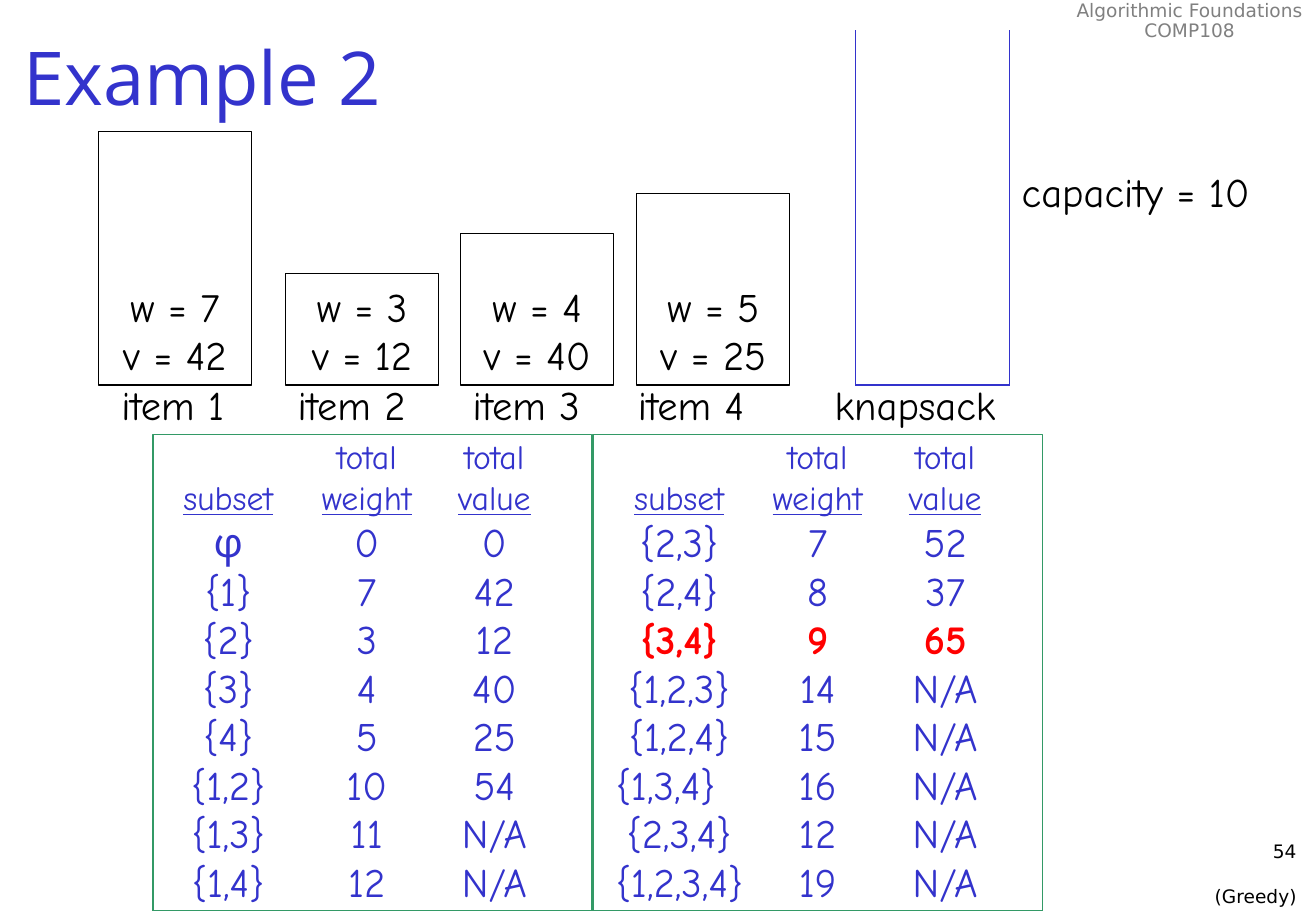
from pptx import Presentation
from pptx.dml.color import RGBColor as RGB
from pptx.enum.shapes import MSO_CONNECTOR as LINK, MSO_SHAPE as SHAPE
from pptx.enum.text import MSO_ANCHOR as ANCHOR, MSO_AUTO_SIZE as FIT, PP_ALIGN as ALIGN
from pptx.oxml.ns import qn
from pptx.util import Inches, Pt
from lxml.etree import SubElement

COLORS = {"blue": "3333CC", "black": "000000", "gray": "808080", "green": "339966", "red": "FF0000"}
HAND, SANS, HEAD = "Comic Neue", "DejaVu Sans", "Open Sans"
STOPS = (0.52, 1.66, 2.71)
BASE = 3.17
ITEMS = (
    (0.81, 2.09, 7, 42, 0.9, 1.14),
    (2.35, 0.92, 3, 12, 2.35, 1.19),
    (3.79, 1.25, 4, 40, 3.79, 1.19),
    (5.24, 1.58, 5, 25, 5.15, 1.19),
)
LEFT = (
    "\tφ\t0\t0", "\t{1}\t7\t42", "\t{2}\t3\t12", "\t{3}\t4\t40",
    "\t{4}\t5\t25", "\t{1,2}\t10\t54", "\t{1,3}\t11\tN/A", "\t{1,4}\t12\tN/A",
)
RIGHT = (
    "\t{2,3}\t7\t52", "\t{2,4}\t8\t37", "\t{3,4}\t9\t65", "\t{1,2,3}\t14\tN/A",
    "\t{1,2,4}\t15\tN/A", "{1,3,4}\t16\tN/A", "\t{2,3,4}\t12\tN/A", "\t{1,2,3,4}\t19\tN/A",
)
BEST = RIGHT[2]


class Page:
    def __init__(self, deck):
        self.slide = deck.slides.add_slide(deck.slide_layouts[5])
        self.shapes = self.slide.shapes

    def color(self, name):
        return RGB.from_string(COLORS[name])

    def style(self, para, size, font=HAND, color="black", bold=False):
        for run in para.runs:
            run.font.size = Pt(size)
            run.font.name = font
            run.font.bold = bold
            run.font.color.rgb = self.color(color)

    def fill(self, frame, text, size, font=HAND, color="black", align=ALIGN.LEFT):
        frame.text = text
        for para in frame.paragraphs:
            para.alignment = align
            self.style(para, size, font, color)

    def title(self, text, *area):
        box = self.shapes.title
        box.left, box.top, box.width, box.height = map(Inches, area)
        frame = box.text_frame
        frame.auto_size = FIT.NONE
        frame.vertical_anchor = ANCHOR.MIDDLE
        self.fill(frame, text, 44, HEAD, "blue")

    def text(self, text, area, size=24, font=HAND, color="black", align=ALIGN.LEFT, wrap=False, fit=FIT.SHAPE_TO_FIT_TEXT):
        frame = self.shapes.add_textbox(*map(Inches, area)).text_frame
        frame.word_wrap = wrap
        frame.auto_size = fit
        self.fill(frame, text, size, font, color, align)
        return frame

    def rect(self, area, color):
        box = self.shapes.add_shape(SHAPE.RECTANGLE, *map(Inches, area))
        box.shadow.inherit = False
        box.fill.background()
        box.line.color.rgb = self.color(color)
        box.line.width = Pt(0.75)
        return box

    def item(self, left, height, weight, value):
        frame = self.rect((left, BASE - height, 1.26, height), "black").text_frame
        frame.word_wrap = False
        frame.vertical_anchor = ANCHOR.BOTTOM
        self.fill(frame, f"w = {weight}\nv = {value}", 24, align=ALIGN.CENTER)

    def line(self, *ends):
        line = self.shapes.add_connector(LINK.STRAIGHT, *map(Inches, ends))
        line.line.color.rgb = self.color("blue")
        line.line.width = Pt(0.75)
        SubElement(line._element.spPr, qn("a:effectLst"))

    def tabs(self, para):
        tabs = SubElement(para._p.get_or_add_pPr(), qn("a:tabLst"))
        for stop in STOPS:
            SubElement(tabs, qn("a:tab"), pos=str(Inches(stop)), algn="ctr")

    def subsets(self, left, rows, edge, width):
        frame = self.text("\n".join(("", *rows)), (left, 3.54, 3.88, 3.96), color="blue", wrap=True)
        head, *body = frame.paragraphs
        head.text = "\t\ttotal\ttotal\v\t"
        for part in ("subset", "\t", "weight", "\t", "value"):
            run = head.add_run()
            run.text = part
            run.font.underline = part != "\t"
        self.style(head, 20, color="blue")
        for para in frame.paragraphs:
            self.tabs(para)
        for para, row in zip(body, rows):
            if row == BEST:
                self.style(para, 24, color="red", bold=True)
        self.rect((edge, 3.58, width, 3.92), "green")


def main():
    deck = Presentation()
    deck.slide_width, deck.slide_height = Inches(10.83), Inches(7.5)
    page = Page(deck)
    course = page.text("Algorithmic Foundations\nCOMP108", (8.75, -0.04, 2.08, 0.43),
                       11, SANS, "gray", ALIGN.CENTER)
    for para in course.paragraphs:
        para.line_spacing = 0.9
    foot = page.text("54\n(Greedy)", (8.51, 6.87, 2.26, 0.5), 11, SANS,
                     align=ALIGN.RIGHT, wrap=True, fit=FIT.NONE)
    foot.paragraphs[1].space_before = Pt(13)
    page.title("Example 2", 0.09, 0, 10.74, 1.25)

    for num, (left, height, weight, value, start, width) in enumerate(ITEMS, 1):
        page.item(left, height, weight, value)
        page.text(f"item {num}", (start, 3.08, width, 0.5))

    for side in (7.04, 8.31):
        page.line(side, 0.25, side, BASE)
    page.line(7.04, BASE, 8.31, BASE)
    page.text("knapsack", (6.77, 3.08, 1.59, 0.5))
    page.text("capacity = 10", (8.31, 1.33, 2.21, 0.5))

    page.subsets(1.26, LEFT, 1.26, 3.61)
    page.subsets(4.97, RIGHT, 4.88, 3.7)
    deck.save("out.pptx")


if __name__ == "__main__":
    main()
